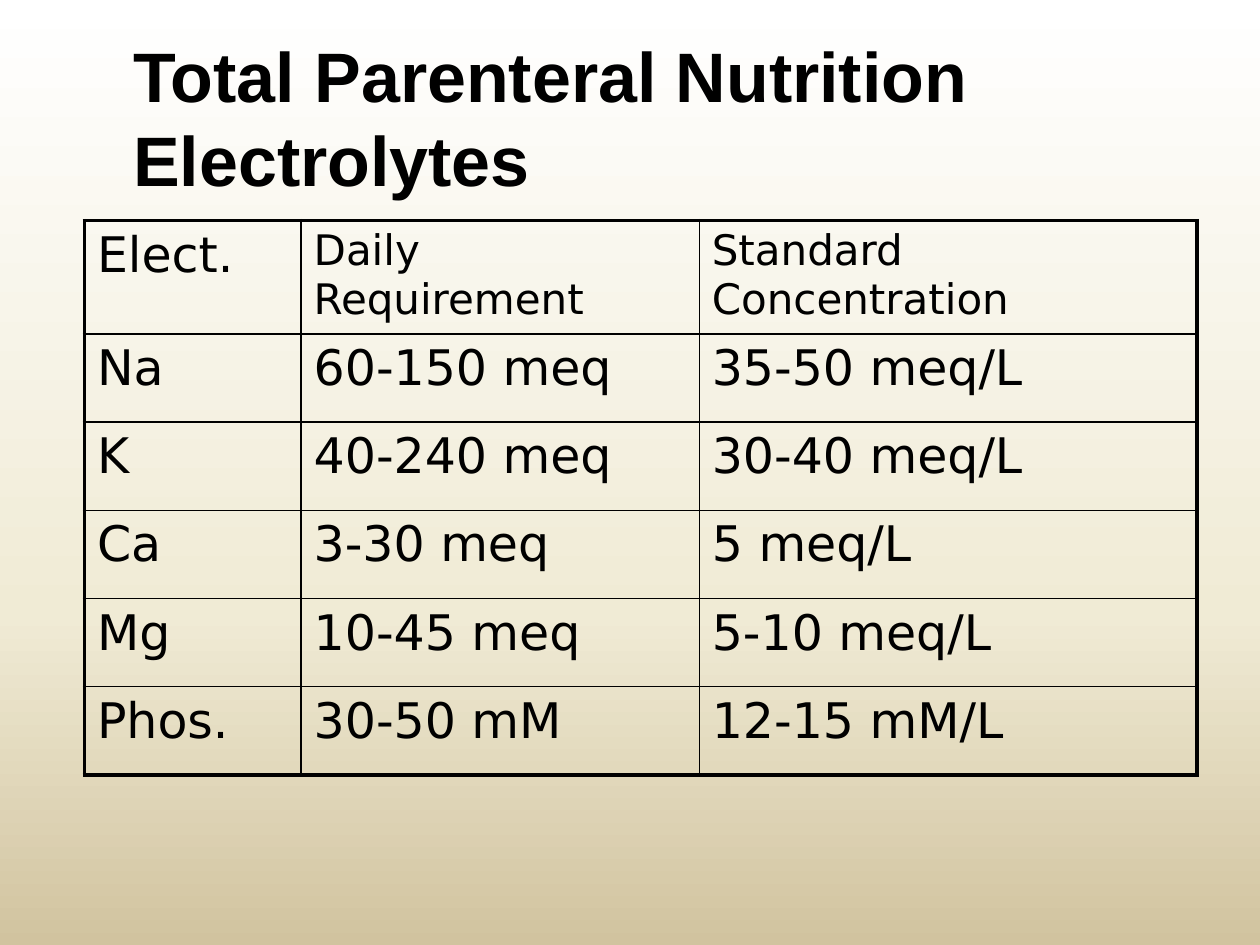
import dataclasses

import lxml.etree
import pptx
import pptx.dml.color
import pptx.enum.text
import pptx.oxml.ns
import pptx.slide
import pptx.table
import pptx.text.text
import pptx.util
from pptx.util import Inches


@dataclasses.dataclass(frozen=True)
class Theme:
    ink: str = "000000"
    stops: tuple = ((0, "FFFFFF"), (65, "F0EBD5"), (100, "D1C39F"))
    title_font: str = "Arial"
    body_font: str = "DejaVu Sans"
    title_pt: float = 40
    body_pt: float = 28
    heading_pt: float = 24
    outer_pt: float = 2.25
    inner_pt: float = 1


@dataclasses.dataclass(frozen=True)
class Electrolyte:
    symbol: str
    daily: str
    standard: str


THEME = Theme()
HEADINGS = Electrolyte("Elect.", "Daily Requirement", "Standard Concentration")
ELECTROLYTES = (
    Electrolyte("Na", "60-150 meq", "35-50 meq/L"),
    Electrolyte("K", "40-240 meq", "30-40 meq/L"),
    Electrolyte("Ca", "3-30 meq", "5 meq/L"),
    Electrolyte("Mg", "10-45 meq", "5-10 meq/L"),
    Electrolyte("Phos.", "30-50 mM", "12-15 mM/L"),
)
COLUMN_WIDTHS = (1.72, 3.16, 3.95)
HEADING_HEIGHT, ROW_HEIGHT = 0.88, 0.7


def add_color(parent: lxml.etree._Element, color: str) -> None:
    tag = pptx.oxml.ns.qn("a:srgbClr")
    lxml.etree.SubElement(parent, tag, val=color)


def paint_background(s: pptx.slide.Slide) -> None:
    fill = s.background.fill
    fill.gradient()
    fill.gradient_angle = 270
    stops = next(s._element.iter(pptx.oxml.ns.qn("a:gsLst")))
    for stop in list(stops):
        stops.remove(stop)
    for position, color in THEME.stops:
        stop = lxml.etree.SubElement(
            stops, pptx.oxml.ns.qn("a:gs"), pos=str(position * 1000)
        )
        add_color(stop, color)


def format_runs(
    tf: pptx.text.text.TextFrame, font: str, size: float, bold: bool = False
) -> None:
    for p in tf.paragraphs:
        for r in p.runs:
            r.font.name = font
            r.font.size = pptx.util.Pt(size)
            r.font.bold = bold
            r.font.color.rgb = pptx.dml.color.RGBColor.from_string(THEME.ink)


def add_title(s: pptx.slide.Slide, text: str) -> None:
    sp = s.shapes.add_textbox(Inches(0.96), Inches(0.3), Inches(8.54), Inches(1.25))
    tf = sp.text_frame
    tf.word_wrap = True
    tf.vertical_anchor = pptx.enum.text.MSO_ANCHOR.MIDDLE
    tf.text = text
    format_runs(tf, THEME.title_font, THEME.title_pt, bold=True)


def set_borders(cell: pptx.table._Cell, outer: dict[str, bool]) -> None:
    tc_pr = cell._tc.get_or_add_tcPr()
    for index, (side, is_outer) in enumerate(outer.items()):
        width = pptx.util.Pt(THEME.outer_pt if is_outer else THEME.inner_pt)
        line = lxml.etree.Element(pptx.oxml.ns.qn(f"a:ln{side}"), w=str(int(width)))
        fill = lxml.etree.SubElement(line, pptx.oxml.ns.qn("a:solidFill"))
        add_color(fill, THEME.ink)
        tc_pr.insert(index, line)


def add_electrolyte_table(s: pptx.slide.Slide) -> None:
    records = (HEADINGS, *ELECTROLYTES)
    heights = (HEADING_HEIGHT, *[ROW_HEIGHT] * len(ELECTROLYTES))
    table = s.shapes.add_table(
        len(records), len(COLUMN_WIDTHS), Inches(0.67), Inches(1.75),
        Inches(sum(COLUMN_WIDTHS)), Inches(sum(heights)),
    ).table
    table.first_row = False
    table.horz_banding = False
    for column, width in zip(table.columns, COLUMN_WIDTHS):
        column.width = Inches(width)
    last_row, last_column = len(records) - 1, len(COLUMN_WIDTHS) - 1
    for i, (record, height) in enumerate(zip(records, heights)):
        table.rows[i].height = Inches(height)
        for j, text in enumerate(dataclasses.astuple(record)):
            cell = table.cell(i, j)
            cell.fill.background()
            cell.text_frame.text = text
            size = THEME.heading_pt if i == 0 and j > 0 else THEME.body_pt
            format_runs(cell.text_frame, THEME.body_font, size)
            set_borders(
                cell,
                {"L": j == 0, "R": j == last_column, "T": i == 0, "B": i == last_row},
            )


def main() -> None:
    prs = pptx.Presentation()
    prs.slide_width, prs.slide_height = Inches(10), Inches(7.5)
    s = prs.slides.add_slide(prs.slide_layouts[6])
    paint_background(s)
    add_title(s, "Total Parenteral Nutrition\vElectrolytes")
    add_electrolyte_table(s)
    prs.save("out.pptx")


if __name__ == "__main__":
    main()
